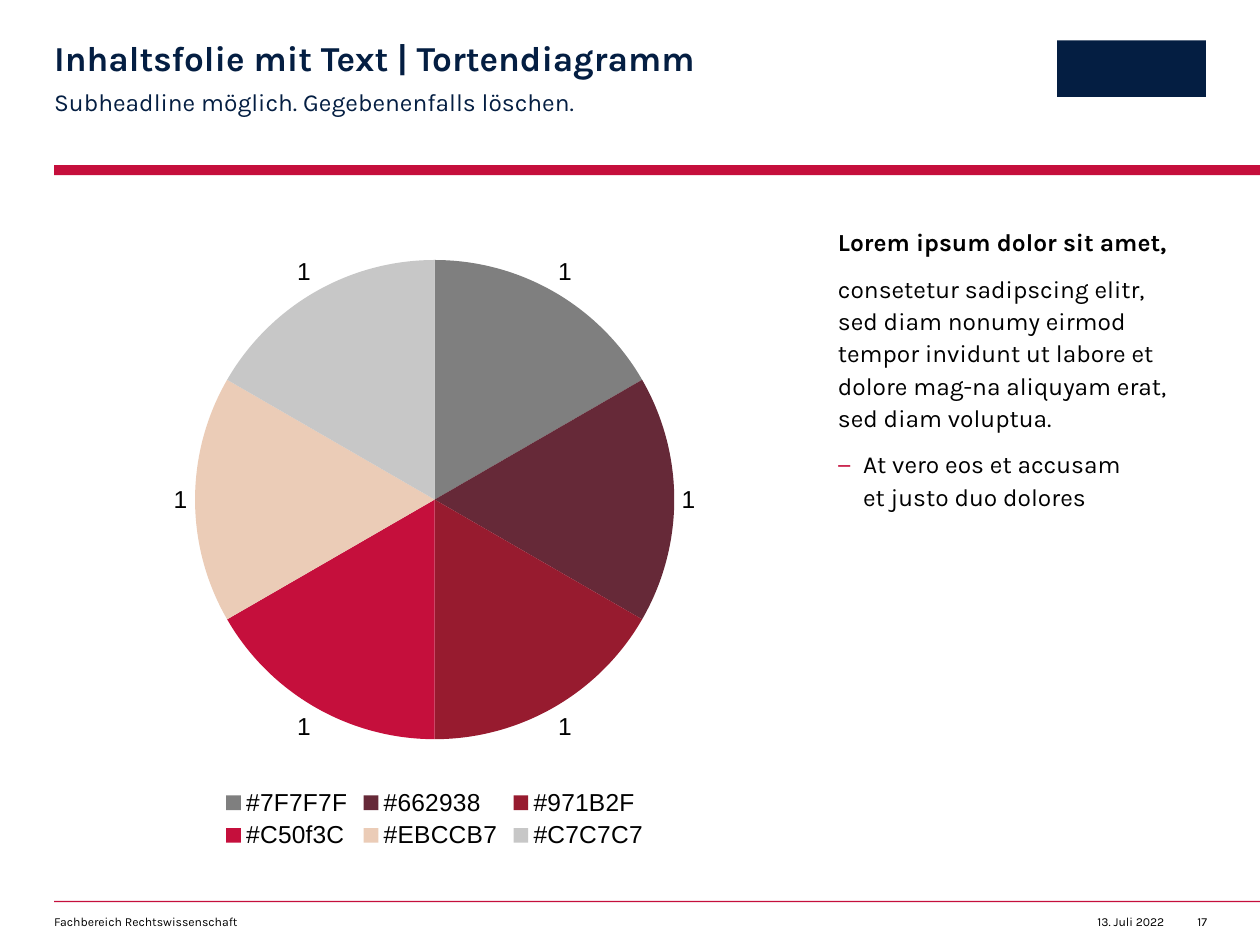
from lxml import etree
from pptx import Presentation
from pptx.chart import data as cd
from pptx.dml.color import RGBColor
from pptx.enum import chart as ch, shapes, text
from pptx.oxml import ns
from pptx.util import Inches, Pt

RED = RGBColor(0xC5, 0x0F, 0x3C)
NAVY = RGBColor(0x04, 0x1E, 0x42)
BLACK = RGBColor(0, 0, 0)
LEFT = 0.43
TOP = 1.78
NAMES = ["#7F7F7F", "#662938", "#971B2F", "#C50f3C", "#EBCCB7", "#C7C7C7"]


class Deck:
    face = "Karla"
    plot = "Arial"

    def __init__(self):
        self.prs = Presentation()
        self.prs.slide_width = Inches(10)
        self.prs.slide_height = Inches(7.5)
        self.slide = self.prs.slides.add_slide(self.prs.slide_layouts[3])

    def font(self, font, size, color=BLACK, bold=False, face=None):
        font.name = face or self.face
        font.size = Pt(size)
        font.color.rgb = color
        font.bold = bold

    def place(self, shape, *box):
        shape.left, shape.top, shape.width, shape.height = map(Inches, box)

    def frame(self, shape, inset=0, wrap=True):
        frame = shape.text_frame
        frame.margin_left = frame.margin_top = frame.margin_bottom = 0
        frame.margin_right = Inches(inset)
        frame.word_wrap = wrap
        frame.auto_size = text.MSO_AUTO_SIZE.NONE
        frame.vertical_anchor = text.MSO_ANCHOR.TOP
        return frame

    def bar(self, color, *box):
        bar = self.slide.shapes.add_shape(
            shapes.MSO_SHAPE.RECTANGLE, *map(Inches, box))
        bar.shadow.inherit = False
        bar.fill.solid()
        bar.fill.fore_color.rgb = color
        bar.line.fill.background()

    def note(self, words, *box, right=False):
        shape = self.slide.shapes.add_textbox(*map(Inches, box))
        para = self.frame(shape, wrap=not right).paragraphs[0]
        para.text = words
        para.alignment = text.PP_ALIGN.RIGHT if right else text.PP_ALIGN.LEFT
        self.font(para.runs[0].font, 7)

    def title(self, words, *box):
        shape = self.slide.shapes.title
        self.place(shape, *box)
        para = self.frame(shape).paragraphs[0]
        para.text = words
        para.alignment = text.PP_ALIGN.LEFT
        para.line_spacing = 0.9
        self.font(para.runs[0].font, 20, NAVY, True)

    def body(self, index, lines, *box, inset=0.2, color=BLACK):
        shape = self.slide.placeholders[index]
        self.place(shape, *box)
        frame = self.frame(shape, inset)
        frame.text = "\n".join(words for words, _, _ in lines)
        for para, (_, bold, dash) in zip(frame.paragraphs, lines):
            para.line_spacing = 1.1
            para.space_before = Pt(0)
            para.space_after = Pt(8)
            self.bullet(para, dash)
            for run in para.runs:
                self.font(run.font, 14, color, bold)

    def bullet(self, para, dash):
        para.level = 1 if dash else 0
        props = para._p.get_or_add_pPr()
        props.set("marL", str(Inches(0.2 if dash else 0)))
        props.set("indent", str(Inches(-0.2 if dash else 0)))
        if not dash:
            etree.SubElement(props, ns.qn("a:buNone"))
            return
        tint = etree.SubElement(props, ns.qn("a:buClr"))
        etree.SubElement(tint, ns.qn("a:srgbClr"), val=str(RED))
        etree.SubElement(props, ns.qn("a:buFont"), typeface=self.face)
        etree.SubElement(props, ns.qn("a:buChar"), char="−")

    def pie(self, names, values, *box):
        data = cd.CategoryChartData()
        data.categories = names
        data.add_series("Series 1", values)
        chart = self.slide.shapes.add_chart(
            ch.XL_CHART_TYPE.PIE, *map(Inches, box), data).chart
        self.font(chart.font, 10, face=self.plot)
        chart.has_title = False
        chart.has_legend = True
        chart.legend.position = ch.XL_LEGEND_POSITION.BOTTOM
        chart.legend.include_in_layout = False
        self.font(chart.legend.font, 14, face=self.plot)
        plot = chart.plots[0]
        plot.vary_by_categories = True
        plot.has_data_labels = True
        labels = plot.data_labels
        labels.show_value = True
        labels.show_percentage = False
        labels.position = ch.XL_LABEL_POSITION.OUTSIDE_END
        self.font(labels.font, 14, face=self.plot)
        for i, name in enumerate(names):
            part = plot.series[0].points[i].format
            part.fill.solid()
            part.fill.fore_color.rgb = RGBColor.from_string(name[1:].upper())
            part.line.fill.background()


def main():
    deck = Deck()
    deck.bar(RED, LEFT, 1.31, 9.57, 0.08)
    deck.bar(RED, LEFT, 7.15, 9.57, 0.01)
    deck.bar(NAVY, 8.39, 0.32, 1.18, 0.45)
    deck.note("13. Juli 2022", 8.65, 7.26, 0.59, 0.12, right=True)
    deck.note("Fachbereich Rechtswissenschaft", LEFT, 7.26, 4.49, 0.12)
    deck.note("17", 9.38, 7.26, 0.2, 0.12, right=True)
    deck.title("Inhaltsfolie mit Text | Tortendiagramm",
               LEFT, 0.33, 5.61, 0.3)
    deck.body(2, [("Subheadline möglich. Gegebenenfalls löschen.", False, False)],
              LEFT, 0.67, 5.61, 0.24, inset=0.39, color=NAVY)
    deck.body(1, [
        ("Lorem ipsum dolor sit amet,", True, False),
        ("consetetur sadipscing elitr, sed diam nonumy eirmod tempor invidunt "
         "ut labore et dolore mag-na aliquyam erat, sed diam voluptua.",
         False, False),
        ("At vero eos et accusam\vet justo duo dolores", False, True),
    ], 6.65, TOP, 2.93, 5)
    deck.pie(NAMES, [1] * len(NAMES), LEFT, TOP, 6.04, 5)
    deck.prs.save("out.pptx")


if __name__ == "__main__":
    main()
